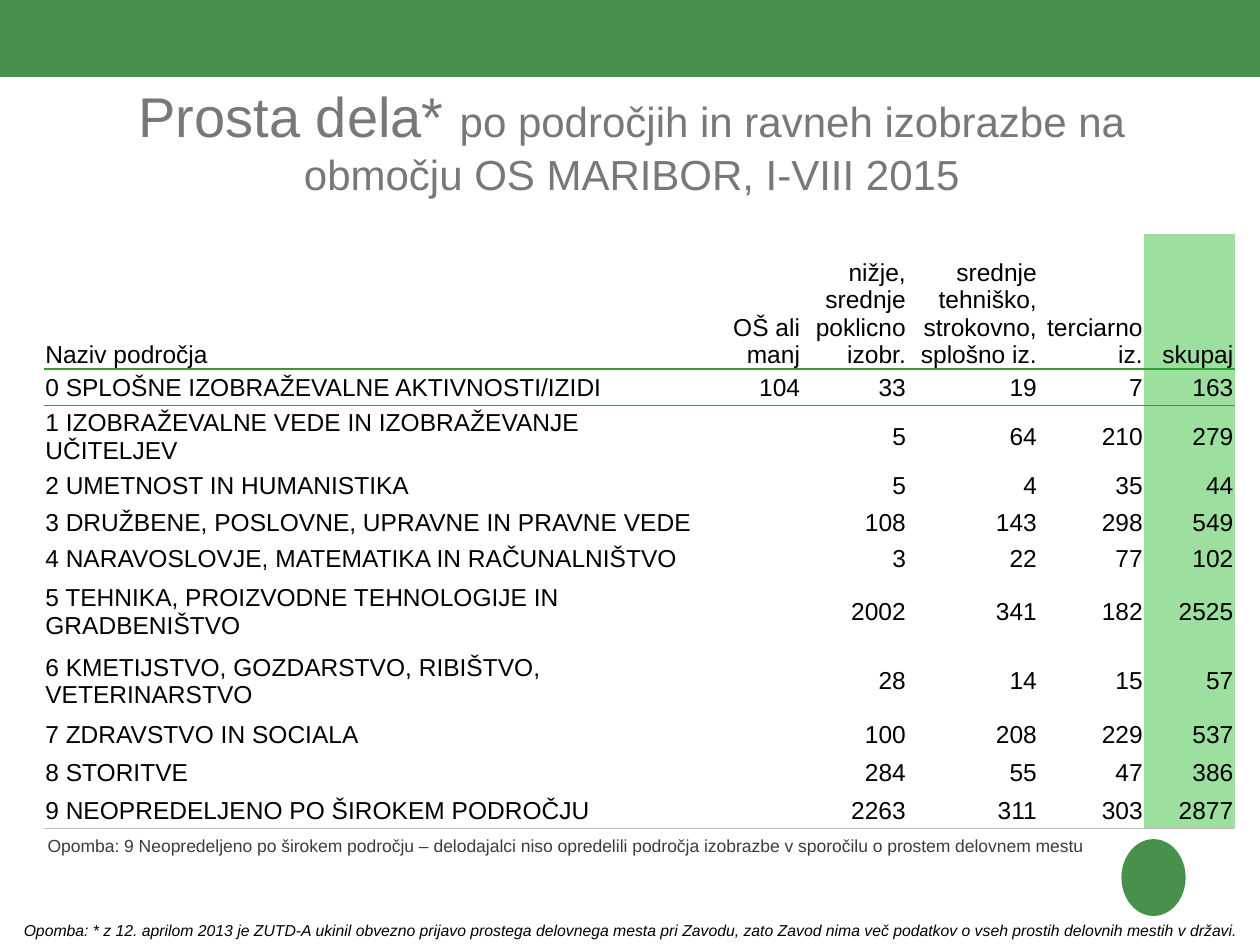
import pptx
import pptx.util
import pptx.dml.color
import pptx.enum.shapes
import pptx.enum.text
import pptx.oxml.ns
import lxml.etree
from pptx.util import Inches

RGB = pptx.dml.color.RGBColor
GREEN = RGB(0x49, 0x90, 0x4D)
LIGHT_GREEN = RGB(0x9D, 0xDF, 0x9F)
RULE_GREEN = RGB(0x33, 0x9E, 0x35)
RULE_GRAY = RGB(0xBF, 0xBF, 0xBF)
TITLE_GRAY = RGB(0x79, 0x77, 0x77)
NOTE_GRAY = RGB(0x3C, 0x3C, 0x3C)
BLACK = RGB(0, 0, 0)

FONT = "Arial"
PLAIN_TABLE = "{2D5ABB26-0587-4C30-8999-92F81FD0307C}"
ALIGN = pptx.enum.text.PP_ALIGN
ANCHOR = pptx.enum.text.MSO_ANCHOR
SHAPES = pptx.enum.shapes.MSO_SHAPE

TITLE = [
    ("Prosta dela* ", 32),
    ("po področjih in ravneh izobrazbe na območju OS MARIBOR, I-VIII 2015", 24),
]
NOTE = (
    "Opomba: 9 Neopredeljeno po širokem področju – delodajalci niso opredelili "
    "področja izobrazbe v sporočilu o prostem delovnem mestu"
)
FOOTNOTE = (
    "Opomba: * z 12. aprilom 2013 je ZUTD-A ukinil obvezno prijavo prostega "
    "delovnega mesta pri Zavodu, zato Zavod nima več podatkov o vseh prostih "
    "delovnih mestih v državi."
)
COLUMN_WIDTHS = [5.32, 0.69, 0.84, 1.04, 0.84, 0.72]
ROW_HEIGHTS = [1.07, 0.29, 0.49, 0.29, 0.29, 0.29, 0.55, 0.55, 0.3, 0.3, 0.3]
ROWS = [
    ("Naziv področja", "OŠ ali manj", "nižje, srednje poklicno izobr.",
     "srednje tehniško, strokovno, splošno iz.", "terciarno iz.", "skupaj"),
    ("0 SPLOŠNE IZOBRAŽEVALNE AKTIVNOSTI/IZIDI", 104, 33, 19, 7, 163),
    ("1 IZOBRAŽEVALNE VEDE IN IZOBRAŽEVANJE UČITELJEV", "", 5, 64, 210, 279),
    ("2 UMETNOST IN HUMANISTIKA", "", 5, 4, 35, 44),
    ("3 DRUŽBENE, POSLOVNE, UPRAVNE IN PRAVNE VEDE", "", 108, 143, 298, 549),
    ("4 NARAVOSLOVJE, MATEMATIKA IN RAČUNALNIŠTVO", "", 3, 22, 77, 102),
    ("5 TEHNIKA, PROIZVODNE TEHNOLOGIJE IN GRADBENIŠTVO", "", 2002, 341, 182, 2525),
    ("6 KMETIJSTVO, GOZDARSTVO, RIBIŠTVO, VETERINARSTVO", "", 28, 14, 15, 57),
    ("7 ZDRAVSTVO IN SOCIALA", "", 100, 208, 229, 537),
    ("8 STORITVE", "", 284, 55, 47, 386),
    ("9 NEOPREDELJENO PO ŠIROKEM PODROČJU", "", 2263, 311, 303, 2877),
]


def add_text(para, text, size=14, color=BLACK, italic=False, align=ALIGN.LEFT):
    para.alignment = align
    span = para.add_run()
    span.text = text
    span.font.name = FONT
    span.font.size = pptx.util.Pt(size)
    span.font.color.rgb = color
    span.font.italic = italic


def add_box(page, left, top, width, height, wrap=True):
    box = page.shapes.add_textbox(Inches(left), Inches(top), Inches(width), Inches(height))
    box.text_frame.word_wrap = wrap
    box.text_frame.auto_size = pptx.enum.text.MSO_AUTO_SIZE.SHAPE_TO_FIT_TEXT
    return box.text_frame.paragraphs[0]


def add_green_shape(page, kind, left, top, width, height):
    shape = page.shapes.add_shape(
        kind, Inches(left), Inches(top), Inches(width), Inches(height))
    shape.shadow.inherit = False
    shape.fill.solid()
    shape.fill.fore_color.rgb = GREEN
    shape.line.fill.background()


def add_border(cell, side, color, points):
    qn = pptx.oxml.ns.qn
    line = lxml.etree.Element(qn("a:" + side), w=str(pptx.util.Pt(points)))
    fill = lxml.etree.SubElement(line, qn("a:solidFill"))
    lxml.etree.SubElement(fill, qn("a:srgbClr"), val=str(color))
    cell._tc.get_or_add_tcPr().insert(0, line)


def fill_cell(cell, value, row, column):
    cell.margin_left = cell.margin_top = cell.margin_right = Inches(0.01)
    cell.margin_bottom = 0
    cell.vertical_anchor = ANCHOR.MIDDLE if row else ANCHOR.BOTTOM
    para = cell.text_frame.paragraphs[0]
    if value == "":
        lxml.etree.SubElement(para._p, pptx.oxml.ns.qn("a:endParaRPr"), sz="1400")
    else:
        add_text(para, str(value), align=ALIGN.RIGHT if column else ALIGN.LEFT)
    if column == len(COLUMN_WIDTHS) - 1:
        cell.fill.solid()
        cell.fill.fore_color.rgb = LIGHT_GREEN
    else:
        cell.fill.background()
    if row == 0:
        add_border(cell, "lnB", RULE_GREEN, 1)
    elif row == 1:
        add_border(cell, "lnT", RULE_GREEN, 1)
    elif row == len(ROWS) - 1:
        add_border(cell, "lnB", RULE_GRAY, 0.5)


def add_vacancy_table(page):
    frame = page.shapes.add_table(
        len(ROWS), len(COLUMN_WIDTHS), Inches(0.35), Inches(1.86),
        Inches(sum(COLUMN_WIDTHS)), Inches(sum(ROW_HEIGHTS)))
    table = frame.table
    table.first_row = table.horz_banding = False
    for style in frame.element.iter(pptx.oxml.ns.qn("a:tableStyleId")):
        style.text = PLAIN_TABLE
    for column, width in zip(table.columns, COLUMN_WIDTHS):
        column.width = Inches(width)
    for row, height in zip(table.rows, ROW_HEIGHTS):
        row.height = Inches(height)
    for row, values in enumerate(ROWS):
        for column, value in enumerate(values):
            fill_cell(table.cell(row, column), value, row, column)


def main():
    deck = pptx.Presentation()
    deck.slide_width, deck.slide_height = Inches(10), Inches(7.5)
    page = deck.slides.add_slide(deck.slide_layouts[6])
    add_green_shape(page, SHAPES.RECTANGLE, 0, -0.01, 10, 0.62)
    add_green_shape(page, SHAPES.OVAL, 8.9, 6.66, 0.51, 0.61)
    title = add_box(page, 0.51, 0.6, 9.01, 1.04)
    for text, size in TITLE:
        add_text(title, text, size=size, color=TITLE_GRAY, align=ALIGN.CENTER)
    add_text(add_box(page, 0.09, 7.26, 9.88, 0.25), FOOTNOTE, size=9, italic=True)
    add_vacancy_table(page)
    add_text(add_box(page, 0.28, 6.58, 8.44, 0.27, wrap=False), NOTE, size=10, color=NOTE_GRAY)
    deck.save("out.pptx")


if __name__ == "__main__":
    main()
